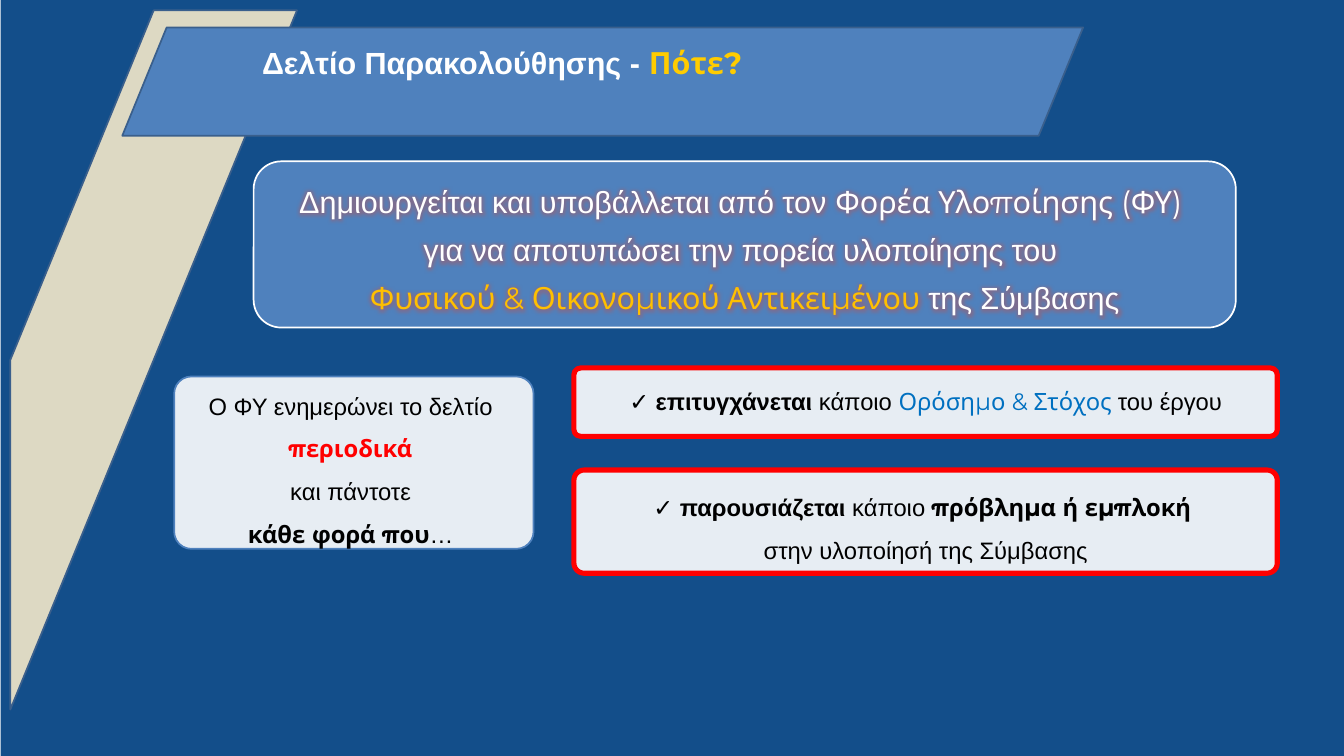
from dataclasses import dataclass

from lxml import etree
from pptx import Presentation
from pptx.dml.color import RGBColor
from pptx.enum.shapes import MSO_SHAPE
from pptx.enum.text import MSO_ANCHOR, PP_ALIGN
from pptx.oxml.ns import qn
from pptx.util import Inches, Pt

RECT, ROUND = MSO_SHAPE.RECTANGLE, MSO_SHAPE.ROUNDED_RECTANGLE
STRIPE, SLANT = MSO_SHAPE.DIAGONAL_STRIPE, MSO_SHAPE.PARALLELOGRAM
TOP, MIDDLE = MSO_ANCHOR.TOP, MSO_ANCHOR.MIDDLE
LEFT, CENTER = PP_ALIGN.LEFT, PP_ALIGN.CENTER

WIDE, HIGH = Inches(21.99), Inches(12.37)
NAVY, BLUE, EDGE, SAND = "134E8A", "4F81BD", "3A5F8C", "DDD9C3"
WHITE, BLACK, RED, SKY = "FFFFFF", "000000", "FF0000", "0070C0"
GOLD, AMBER, GLOW = "FFCC00", "FFC000", "C0504D"

# Run formats
ARIAL = {"name": "Arial", "bold": False}
MONT = {"name": "Montserrat", "bold": False}
STRONG = {"name": "Arial", "bold": True}
HEAVY = {"name": "Montserrat", "bold": True}


@dataclass
class Run:
    text: str
    form: dict
    ink: str = BLACK


@dataclass
class Text:
    lines: list[list[Run]]
    size: int = 28
    gap: float = 1.5
    align: int = CENTER
    anchor: int = MIDDLE
    glow: str = ""


@dataclass
class Part:
    kind: int
    box: tuple[float, float, float, float]  # percent of the slide
    fill: str
    edge: str = ""
    width: float = 2
    bend: float | None = None
    alpha: int = 100
    text: Text | None = None


def color(code: str) -> RGBColor:
    return RGBColor.from_string(code)


def place(box: tuple) -> list[int]:
    return [int(share * side / 100) for share, side in zip(box, (WIDE, HIGH) * 2)]


def add_glow(font_xml, code: str) -> None:
    fx = etree.Element(qn("a:effectLst"))
    halo = etree.SubElement(fx, qn("a:glow"), rad=str(Pt(11)))
    tint = etree.SubElement(halo, qn("a:srgbClr"), val=code)
    etree.SubElement(tint, qn("a:alpha"), val="40000")
    font_xml.find(qn("a:solidFill")).addnext(fx)


def write(frame, text: Text) -> None:
    frame.word_wrap = True
    frame.vertical_anchor = text.anchor
    for i, line in enumerate(text.lines):
        para = frame.add_paragraph() if i else frame.paragraphs[0]
        para.alignment, para.line_spacing = text.align, text.gap
        for item in line:
            run = para.add_run()
            run.text = item.text
            for key, value in {**item.form, "size": Pt(text.size)}.items():
                setattr(run.font, key, value)
            run.font.color.rgb = color(item.ink)
            if text.glow:
                add_glow(run.font._element, text.glow)


def draw(slide, part: Part) -> None:
    shape = slide.shapes.add_shape(part.kind, *place(part.box))
    shape.shadow.inherit = False
    shape.fill.solid()
    shape.fill.fore_color.rgb = color(part.fill)
    if part.alpha < 100:
        tint = shape._element.spPr.find(qn("a:solidFill"))[0]
        etree.SubElement(tint, qn("a:alpha"), val=str(part.alpha * 1000))
    if part.edge:
        shape.line.color.rgb = color(part.edge)
        shape.line.width = Pt(part.width)
    else:
        shape.line.fill.background()
    if part.bend is not None:
        shape.adjustments[0] = part.bend
    if part.text:
        write(shape.text_frame, part.text)


def card(box: tuple, edge: str, width: float, text: Text) -> Part:
    return Part(ROUND, box, WHITE, edge, width, 0.1, 90, text)


# Wording
TITLE = Text([[Run("Δελτίο Παρακολούθησης - ", STRONG, WHITE),
               Run("Πότε?", HEAVY, GOLD)]], 36, 1.0, LEFT, TOP)
INTRO = Text([
    [Run("Δημιουργείται και υποβάλλεται από τον ", ARIAL, WHITE),
     Run("Φορέα Υλοποίησης (ΦΥ) ", MONT, WHITE)],
    [Run("για να αποτυπώσει την πορεία υλοποίησης του ", ARIAL, WHITE)],
    [Run("Φυσικού & Οικονομικού Αντικειμένου ", MONT, AMBER),
     Run("της Σύμβασης", ARIAL, WHITE)],
], 36, 1.3, anchor=TOP, glow=GLOW)
WHEN = Text([
    [Run("Ο ΦΥ ενημερώνει το δελτίο ", ARIAL)],
    [Run("περιοδικά ", HEAVY, RED)],
    [Run("και πάντοτε ", ARIAL)],
    [Run("κάθε φορά που", HEAVY), Run("… ", ARIAL)],
])
GOAL = Text([[Run("✓ ", ARIAL), Run("επιτυγχάνεται ", STRONG), Run("κάποιο ", ARIAL),
              Run("Ορόσημο & Στόχος ", MONT, SKY), Run("του έργου", ARIAL)]], anchor=TOP)
SNAG = Text([
    [Run("✓ ", ARIAL), Run("παρουσιάζεται", STRONG), Run(" κάποιο ", ARIAL),
     Run("πρόβλημα ή εμπλοκή ", HEAVY)],
    [Run("στην υλοποίησή της Σύμβασης", ARIAL)],
])

# Shapes from back to front
PARTS = [
    Part(RECT, (0.05, 0, 99.95, 100), NAVY),
    Part(STRIPE, (0.77, 1.37, 21.33, 92.48), SAND, EDGE),
    Part(SLANT, (9.1, 3.64, 71.49, 14.31), BLUE, EDGE, bend=0.41),
    card((12.96, 49.8, 26.74, 22.8), BLUE, 2, WHEN),
    card((42.7, 48.67, 52.34, 9.05), RED, 6, GOAL),
    card((42.7, 62.17, 52.34, 13.66), RED, 6, SNAG),
    Part(ROUND, (18.87, 21.34, 73.08, 21.99), BLUE, WHITE, text=INTRO),
]


def main() -> None:
    deck = Presentation()
    deck.slide_width, deck.slide_height = WIDE, HIGH
    slide = deck.slides.add_slide(deck.slide_layouts[6])
    for part in PARTS:
        draw(slide, part)
    # Title
    label = slide.shapes.add_textbox(*place((19.05, 5.42, 53.02, 5.74)))
    write(label.text_frame, TITLE)
    deck.save("out.pptx")


if __name__ == "__main__":
    main()
